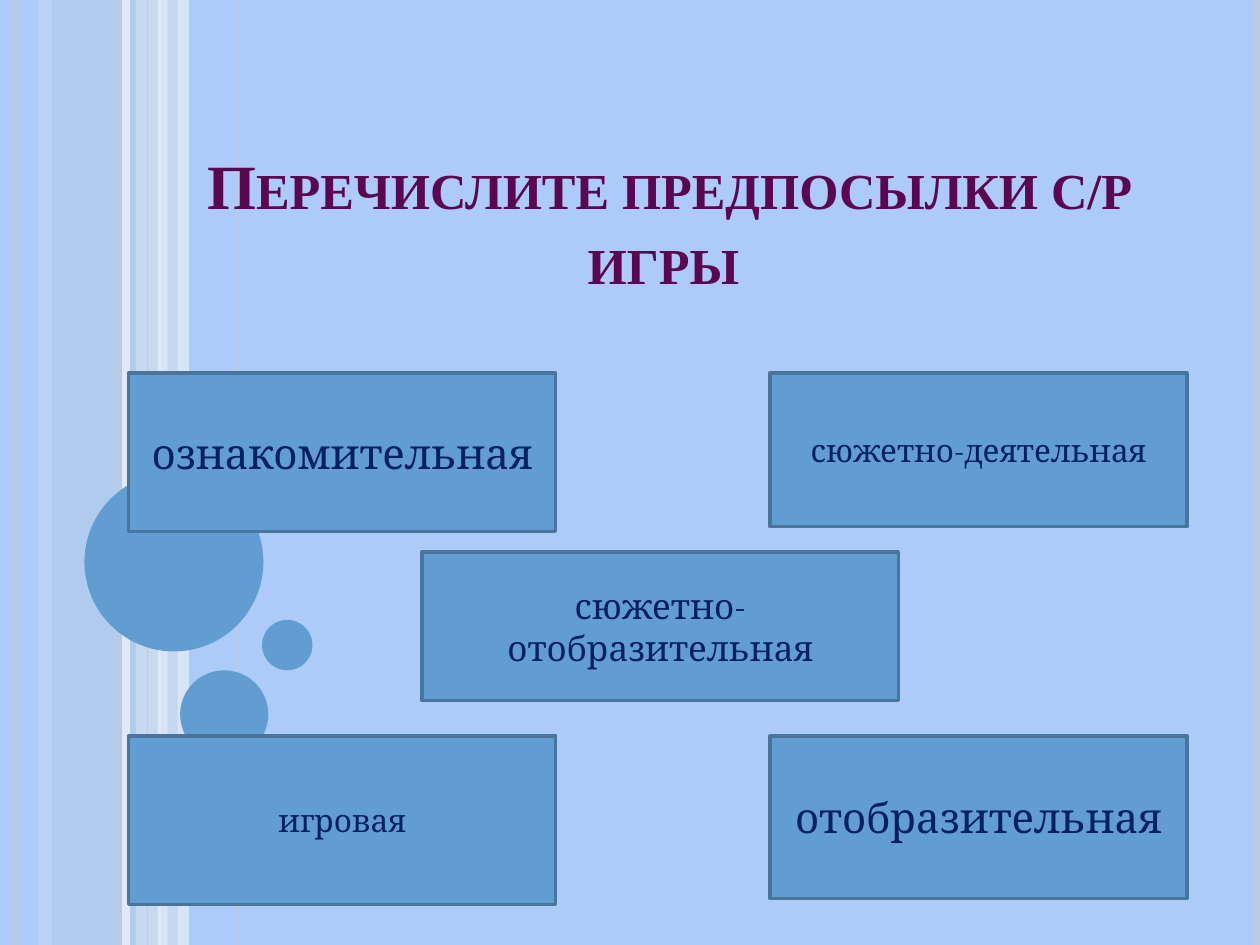
from dataclasses import dataclass

from lxml import etree
from pptx import Presentation
from pptx.dml.color import RGBColor
from pptx.enum.shapes import MSO_CONNECTOR, MSO_SHAPE
from pptx.enum.text import MSO_ANCHOR, MSO_AUTO_SIZE, PP_ALIGN
from pptx.oxml.ns import qn
from pptx.util import Inches, Pt

RECT, OVAL = MSO_SHAPE.RECTANGLE, MSO_SHAPE.OVAL
LINE = MSO_CONNECTOR.STRAIGHT
MIDDLE, BOTTOM = MSO_ANCHOR.MIDDLE, MSO_ANCHOR.BOTTOM
CENTER = PP_ALIGN.CENTER
FIXED = MSO_AUTO_SIZE.NONE
TITLE_ONLY = 5
COLS, ROWS = 10, 7.5  # square grid, one inch per cell


@dataclass(frozen=True)
class Theme:
    back: str = "ACCBF9"
    band: str = "B7CCE5"
    light: str = "D3DFEE"
    pale: str = "EAEFF7"
    box: str = "629DD1"
    edge: str = "49749B"
    text: str = "002060"
    head: str = "5A0650"
    head_font: str = "Times New Roman"
    body_font: str = "Cambria"
    head_size: int = 36
    large: int = 24
    medium: int = 20
    small: int = 18
    edge_width: int = 2


class Page:
    def __init__(self, deck, theme):
        self.theme = theme
        self.cell = deck.slide_width / COLS
        self.slide = deck.slides.add_slide(deck.slide_layouts[TITLE_ONLY])
        self.paint(self.slide.background.fill, theme.back)

    def grid(self, *cells):
        return [round(n * self.cell) for n in cells]

    def paint(self, fill, color):
        fill.solid()
        fill.fore_color.rgb = RGBColor.from_string(color)

    def fade(self, shape, alpha):
        if alpha < 100:
            for color in shape.element.spPr.iter(qn("a:srgbClr")):
                etree.SubElement(color, qn("a:alpha"), val=str(alpha * 1000))

    def shape(self, kind, place, color, alpha=100):
        item = self.slide.shapes.add_shape(kind, *self.grid(*place))
        item.shadow.inherit = False
        self.paint(item.fill, color)
        item.line.fill.background()
        self.fade(item, alpha)
        return item

    def band(self, left, width, color, alpha):
        self.shape(RECT, (left, 0, width, ROWS), color, alpha)

    def stripe(self, col, color, width, alpha=100):
        item = self.slide.shapes.add_connector(
            LINE, *self.grid(col, 0, col, ROWS))
        item.line.width = Pt(width)
        self.paint(item.line.fill, color)
        self.fade(item, alpha)
        etree.SubElement(item.element.spPr, qn("a:effectLst"))

    def dot(self, left, top, size):
        self.shape(OVAL, (left, top, size, size), self.theme.box)

    def label(self, frame, words, font, size, color, anchor):
        frame.word_wrap = True
        frame.auto_size = FIXED
        frame.vertical_anchor = anchor
        para = frame.paragraphs[0]
        para.alignment = CENTER
        run = para.add_run()
        run.text = words
        run.font.name = font
        run.font.size = Pt(size)
        run.font.color.rgb = RGBColor.from_string(color)
        return run

    def title(self, words, place):
        look, item = self.theme, self.slide.shapes.title
        item.left, item.top, item.width, item.height = self.grid(*place)
        run = self.label(item.text_frame, words, look.head_font,
                         look.head_size, look.head, BOTTOM)
        run.font.bold = True
        for props in item.element.iter(qn("a:rPr")):
            props.set("cap", "small")
        # Bring the title in front of the stripes
        item.element.getparent().append(item.element)

    def card(self, words, place, size):
        look = self.theme
        item = self.shape(RECT, place, look.box)
        self.paint(item.line.fill, look.edge)
        item.line.width = Pt(look.edge_width)
        self.label(item.text_frame, words, look.body_font, size,
                   look.text, MIDDLE)


def main():
    look = Theme()
    deck = Presentation()
    deck.slide_width, deck.slide_height = Inches(COLS), Inches(ROWS)
    page = Page(deck, look)

    # Side bands and stripes
    for band in ((0.42, 0.67, look.band, 54), (0.3, 0.11, look.light, 36),
                 (1.08, 0.2, look.light, 70), (1.25, 0.25, look.pale, 71)):
        page.band(*band)
    for stripe in ((0.12, look.band, 4.5, 73), (1, look.pale, 4.5, 83),
                   (0.93, look.band, 4.5), (1.89, look.band, 2.25, 82),
                   (1.17, look.band, 0.75), (9.97, look.band, 4.5)):
        page.stripe(*stripe)
    page.band(1.33, 0.08, look.band, 51)

    # Circles
    for dot in ((0.67, 3.75, 1.42), (1.43, 5.32, 0.7), (2.08, 4.92, 0.4)):
        page.dot(*dot)

    # Title
    page.title("Перечислите предпосылки с/р игры ", (1.22, 0.44, 8.19, 1.97))

    # Answer cards: two columns, two rows, one in the middle
    left, right = (1.02, 3.39), (6.11, 3.31)
    upper, lower = 2.96, 5.84
    for words, (col, width), row, height, size in (
            ("ознакомительная", left, upper, 1.26, look.large),
            ("сюжетно-деятельная", right, upper, 1.22, look.small),
            ("игровая", left, lower, 1.34, look.small),
            ("отобразительная", right, lower, 1.29, look.large),
            ("сюжетно-отобразительная", (3.35, 3.78), 4.38, 1.18,
             look.medium)):
        page.card(words, (col, row, width, height), size)

    deck.save("out.pptx")


if __name__ == "__main__":
    main()
